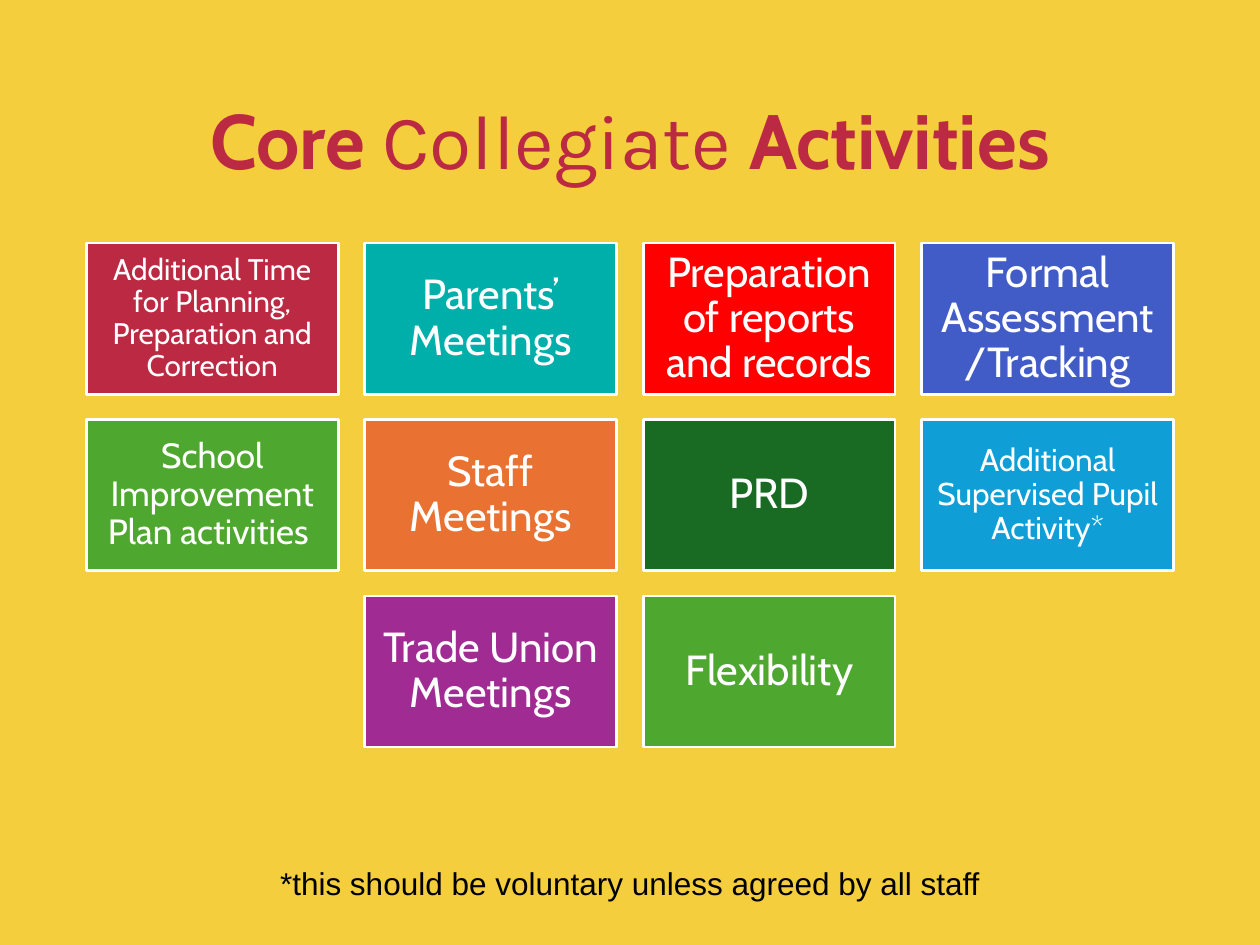
from pptx import Presentation
from pptx.dml.color import RGBColor
from pptx.enum.shapes import MSO_SHAPE
from pptx.enum.text import MSO_ANCHOR, PP_ALIGN
from pptx.util import Inches, Pt

RECTANGLE = MSO_SHAPE.RECTANGLE
CENTER = PP_ALIGN.CENTER
TOP, MIDDLE = MSO_ANCHOR.TOP, MSO_ANCHOR.MIDDLE
TITLE_ONLY = 5

COLORS = {
    "yellow": "F5CE3E", "crimson": "BB2943", "teal": "00AFAA", "red": "FF0000",
    "indigo": "425CC7", "green": "4EA72E", "orange": "E97132", "forest": "196B24",
    "blue": "0F9ED5", "purple": "A02B93", "white": "FFFFFF", "black": "000000",
}

PAGE_WIDTH, PAGE_HEIGHT = 10, 7.5
TILE_WIDTH, TILE_HEIGHT = 2, 1.2
COLUMN_GAP, ROW_GAP = 0.21, 0.2
GRID_TOP = 1.93

# Each activity: label, fill, text size, inner margin
ACTIVITY_ROWS = [
    [("Additional Time for Planning, Preparation and Correction", "crimson", 17, 0.07),
     ("Parents’ Meetings", "teal", 24, 0.1),
     ("Preparation of reports and records", "red", 24, 0.1),
     ("Formal Assessment/Tracking", "indigo", 24, 0.1)],
    [("School Improvement Plan activities ", "green", 20, 0.08),
     ("Staff Meetings", "orange", 24, 0.1),
     ("PRD", "forest", 24, 0.1),
     ("Additional Supervised Pupil Activity*", "blue", 18, 0.07)],
    [("Trade Union Meetings", "purple", 24, 0.1),
     ("Flexibility", "green", 24, 0.1)],
]


def rgb(name):
    return RGBColor.from_string(COLORS[name])


def write(frame, spans, size, color, font="Cabin", spacing=0.9, anchor=MIDDLE,
          margins=(0.1, 0.05)):
    """Fill a frame with one centred paragraph of (text, format) spans."""
    frame.word_wrap = True
    frame.vertical_anchor = anchor
    frame.margin_left = frame.margin_right = Inches(margins[0])
    frame.margin_top = frame.margin_bottom = Inches(margins[1])
    para = frame.paragraphs[0]
    para.alignment = CENTER
    para.line_spacing = spacing
    for text, style in spans:
        span = para.add_run()
        span.text = text
        span.font.name = style.get("font", font)
        span.font.bold = style.get("bold", False)
        span.font.size = Pt(size)
        span.font.color.rgb = rgb(color)


class ActivityPage:
    def __init__(self, deck):
        self.page = deck.slides.add_slide(deck.slide_layouts[TITLE_ONLY])
        background = self.page.background.fill
        background.solid()
        background.fore_color.rgb = rgb("yellow")

    def title(self, spans, left, top, width, height):
        box = self.page.shapes.title
        box.left, box.top = Inches(left), Inches(top)
        box.width, box.height = Inches(width), Inches(height)
        write(box.text_frame, spans, 44, "crimson", anchor=TOP)

    def tile(self, column, row, columns, label, fill, size, margin):
        """Place a tile in a row of the given column count, centred on the page."""
        pitch = TILE_WIDTH + COLUMN_GAP
        row_width = columns * pitch - COLUMN_GAP
        left = (PAGE_WIDTH - row_width) / 2 + column * pitch
        top = GRID_TOP + row * (TILE_HEIGHT + ROW_GAP)
        box = self.page.shapes.add_shape(
            RECTANGLE, Inches(left), Inches(top), Inches(TILE_WIDTH), Inches(TILE_HEIGHT))
        box.shadow.inherit = False
        box.fill.solid()
        box.fill.fore_color.rgb = rgb(fill)
        box.line.color.rgb = rgb("white")
        box.line.width = Pt(1.5)
        write(box.text_frame, [(label, {})], size, "white", margins=(margin, margin))

    def footnote(self, text, left, top, width, height):
        box = self.page.shapes.add_textbox(
            Inches(left), Inches(top), Inches(width), Inches(height))
        write(box.text_frame, [(text, {})], 18, "black", font="Arial", spacing=1.0,
              anchor=TOP)


def main():
    deck = Presentation()
    deck.slide_width, deck.slide_height = Inches(PAGE_WIDTH), Inches(PAGE_HEIGHT)
    page = ActivityPage(deck)
    page.title([(" ", {}), ("Core ", {"bold": True}), ("Collegiate", {"font": "Karla"}),
                (" Activities ", {"bold": True})], 0.95, 0.77, 8.1, 0.87)
    for row, activities in enumerate(ACTIVITY_ROWS):
        for column, activity in enumerate(activities):
            page.tile(column, row, len(activities), *activity)
    page.footnote("*this should be voluntary unless agreed by all staff",
                  1.85, 6.81, 6.3, 0.4)
    deck.save("out.pptx")


if __name__ == "__main__":
    main()
